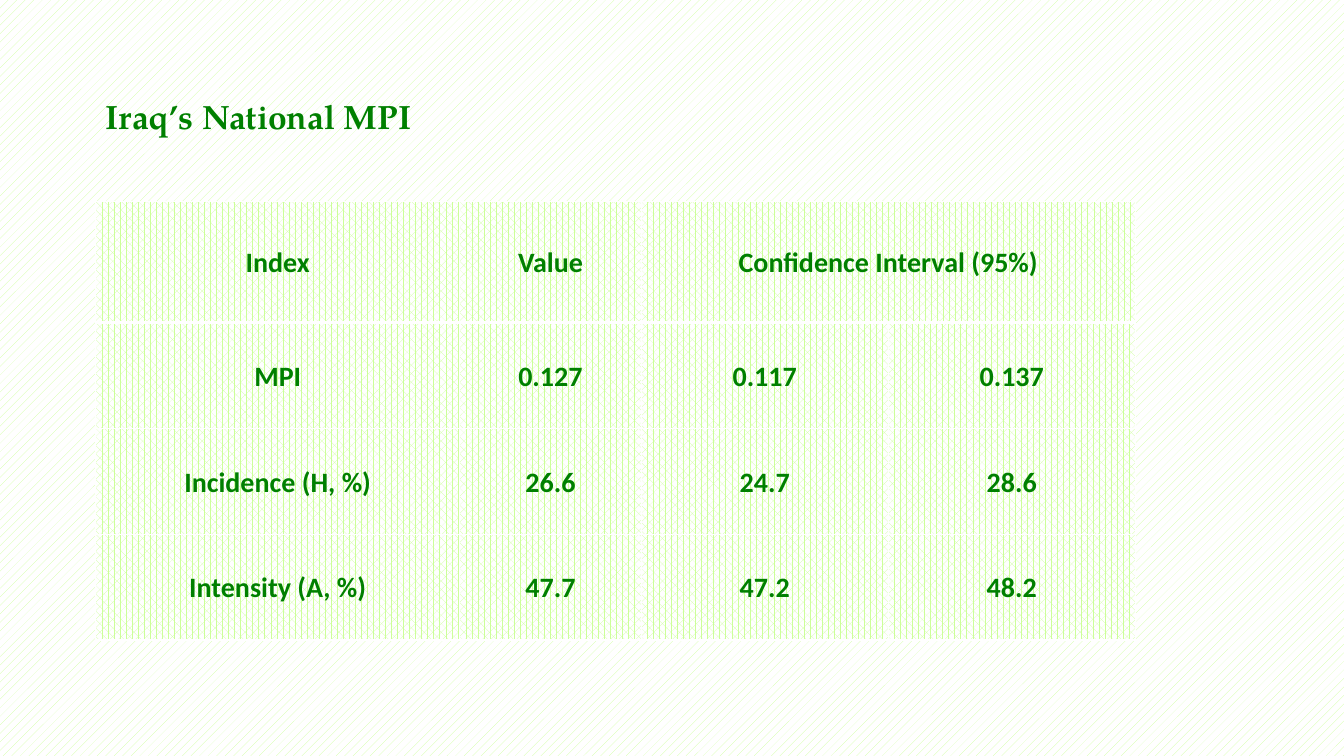
from lxml import etree
from pptx import Presentation
from pptx.dml.color import RGBColor
from pptx.enum.dml import MSO_PATTERN
from pptx.enum.text import MSO_ANCHOR, PP_ALIGN
from pptx.oxml.ns import qn
from pptx.util import Inches, Pt

LEFT, CENTER = PP_ALIGN.LEFT, PP_ALIGN.CENTER
MIDDLE = MSO_ANCHOR.MIDDLE
PCT_20, PCT_60 = MSO_PATTERN.PERCENT_20, MSO_PATTERN.PERCENT_60
GREEN, LIME, WHITE = "008000", "CCFF99", "FFFFFF"
TITLE_ONLY = 5

COLUMN_WIDTHS = [3.61, 1.8, 2.45, 2.45]
ROW_HEIGHTS = [1.2, 1.05, 1.05, 1.05]
INDEX_ROWS = [
    ["Index", "Value", "Confidence Interval (95%)", ""],
    ["MPI", "0.127", "0.117", "0.137"],
    ["Incidence (H, %)", "26.6", "24.7", "28.6"],
    ["Intensity (A, %)", "47.7", "47.2", "48.2"],
]


def rgb(color):
    """Turn a hex string into a colour."""
    return RGBColor.from_string(color)


def fill_pattern(fill, pattern):
    """Fill with a lime pattern on white."""
    fill.patterned()
    fill.pattern = pattern
    fill.fore_color.rgb = rgb(LIME)
    fill.back_color.rgb = rgb(WHITE)


def format_paragraph(paragraph, font_name, size, alignment, line_spacing):
    """Set the bold green type and the layout of a paragraph."""
    paragraph.alignment = alignment
    paragraph.line_spacing = line_spacing
    font = paragraph.font
    font.name, font.size, font.bold = font_name, Pt(size), True
    font.color.rgb = rgb(GREEN)


def set_borders(cell, bottom_width, top_width):
    """Draw white borders around a cell."""
    properties = cell._tc.get_or_add_tcPr()
    widths = {"a:lnL": 1, "a:lnR": 1, "a:lnT": top_width, "a:lnB": bottom_width}
    for position, (side, width) in enumerate(widths.items()):
        border = etree.Element(qn(side), w=str(Pt(width)))
        solid = etree.SubElement(border, qn("a:solidFill"))
        etree.SubElement(solid, qn("a:srgbClr"), val=WHITE)
        properties.insert(position, border)


def add_title(slide, text):
    """Place the slide title."""
    title = slide.shapes.title
    title.left, title.top = Inches(0.95), Inches(0.75)
    title.width, title.height = Inches(5.55), Inches(0.86)
    title.text_frame.text = text
    title.text_frame.vertical_anchor = MIDDLE
    format_paragraph(title.text_frame.paragraphs[0], "TeX Gyre Pagella", 24, LEFT, 0.9)


def format_cell(cell, text, row):
    """Write and format one table cell."""
    cell.text = text
    cell.vertical_anchor = MIDDLE
    cell.margin_left = cell.margin_right = Inches(0.07)
    cell.margin_top = cell.margin_bottom = 0
    paragraph = cell.text_frame.paragraphs[0]
    format_paragraph(paragraph, "Calibri", 20, CENTER, 1.07)
    paragraph.space_after = Pt(8)
    fill_pattern(cell.fill, PCT_60)
    set_borders(cell, 3 if row == 0 else 1, 3 if row == 1 else 1)


def add_index_table(slide):
    """Add the table of index values and confidence intervals."""
    table = slide.shapes.add_table(
        len(ROW_HEIGHTS), len(COLUMN_WIDTHS), Inches(0.95), Inches(2),
        Inches(sum(COLUMN_WIDTHS)), Inches(sum(ROW_HEIGHTS))).table
    for column, width in zip(table.columns, COLUMN_WIDTHS):
        column.width = Inches(width)
    for row, height in zip(table.rows, ROW_HEIGHTS):
        row.height = Inches(height)
    for row, texts in enumerate(INDEX_ROWS):
        for column, text in enumerate(texts):
            format_cell(table.cell(row, column), text, row)
    table.cell(0, 2).merge(table.cell(0, 3))


def main():
    """Build and save the slide."""
    presentation = Presentation()
    presentation.slide_width, presentation.slide_height = Inches(13.33), Inches(7.5)
    slide = presentation.slides.add_slide(presentation.slide_layouts[TITLE_ONLY])
    fill_pattern(slide.background.fill, PCT_20)
    add_title(slide, "Iraq’s National MPI")
    add_index_table(slide)
    presentation.save("out.pptx")


if __name__ == "__main__":
    main()
